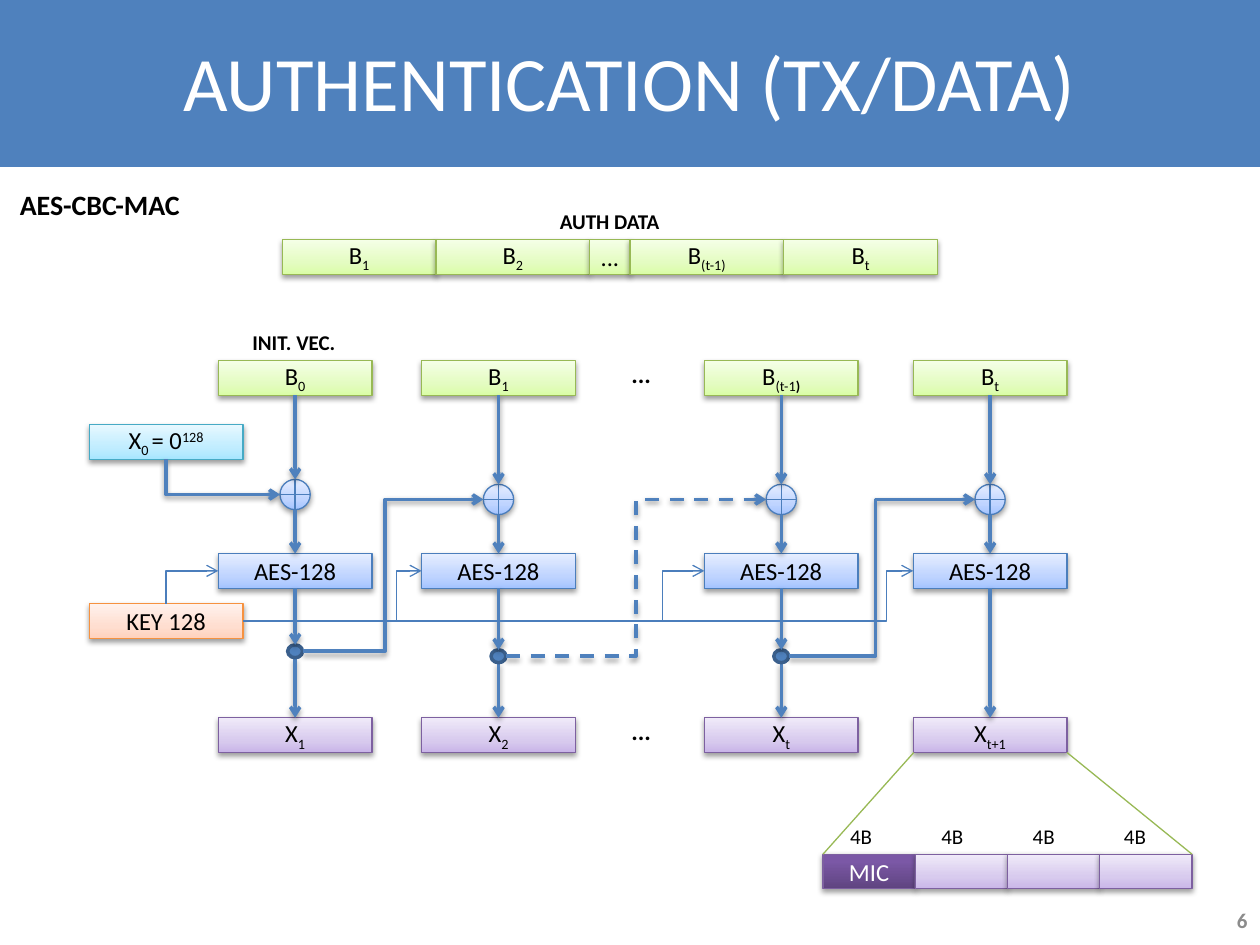
from copy import deepcopy
from dataclasses import dataclass
from typing import NamedTuple, Optional

from lxml import etree
from pptx import Presentation
from pptx.dml.color import RGBColor
from pptx.enum.dml import MSO_LINE
from pptx.enum.shapes import MSO_CONNECTOR, MSO_SHAPE
from pptx.enum.text import MSO_ANCHOR, PP_ALIGN
from pptx.oxml.ns import qn
from pptx.util import Cm, Pt

RECT, XOR, DOT = MSO_SHAPE.RECTANGLE, MSO_SHAPE.FLOWCHART_OR, MSO_SHAPE.FLOWCHART_CONNECTOR
STRAIGHT, ELBOW = MSO_CONNECTOR.STRAIGHT, MSO_CONNECTOR.ELBOW
LEFT, MID, RIGHT = PP_ALIGN.LEFT, PP_ALIGN.CENTER, PP_ALIGN.RIGHT
TOP, CENTER = MSO_ANCHOR.TOP, MSO_ANCHOR.MIDDLE

FONT = "Calibri"
BLUE, THIN, LIME = "4F81BD", "4B7EBC", "98B955"
WIDE, TALL, RING = 3.1, 0.7, 0.61  # box width, box height, XOR diameter
IN_Y, AES_Y, OUT_Y = 7.27, 11.16, 14.47  # tops of the three rows


class Bit(NamedTuple):
    text: str
    base: int = 0
    bold: bool = False


class Area(NamedTuple):
    x: float
    y: float
    w: float = WIDE
    h: float = TALL


class Skin(NamedTuple):
    line: str
    stops: tuple
    ink: str = "000000"
    middle: float = 0.35


@dataclass
class Lane:
    x: float
    ring: float  # XOR centre
    dot: Optional[float]  # branch point centre
    block: tuple
    out: tuple
    bend: float = 0.5
    dash: bool = False


GREEN = Skin(LIME, ("DAFDA7", "E4FCC2", "F5FFE7"))
SKY = Skin(THIN, ("A4C4FF", "BFD4FF", "E6EEFF"))
LILAC = Skin("7D60A0", ("C9B5E8", "D8CBEE", "F0EAF9"))
AQUA = Skin("46AAC5", ("A7E6FF", "C1EDFF", "E7F8FF"))
PEACH = Skin("F69240", ("FFD2BD", "FFDED0", "FFF2ED"))
PLUM = Skin("7D60A0", ("5F4480", "7B58A6", "7C57A8"), "FFFFFF", 0.8)


def sub(name: str, index: str) -> tuple:
    return Bit(name), Bit(index, -25)


LANES = (
    Lane(5.95, 9.97, 13.13, sub("B", "0"), sub("X", "1"), 0.456),
    Lane(10.05, 10.07, 13.23, sub("B", "1"), sub("X", "2"), 0.5, True),
    Lane(15.75, 10.07, 13.23, sub("B", "(t-1") + (Bit(")", -25, True),), sub("X", "t"), 0.465),
    Lane(19.96, 10.07, None, sub("B", "t"), sub("X", "t+1")),
)

deck = Presentation()
deck.slide_width, deck.slide_height = Cm(25.4), Cm(19.05)
slide = deck.slides.add_slide(deck.slide_layouts[6])
shapes = slide.shapes


def tint(color, code: str) -> None:
    color.rgb = RGBColor.from_string(code)


def shade(props) -> None:
    drop = etree.SubElement(props.find(qn("a:effectLst")), qn("a:outerShdw"), blurRad="40000",
                            dist="20000", dir="5400000", rotWithShape="0")
    black = etree.SubElement(drop, qn("a:srgbClr"), val="000000")
    etree.SubElement(black, qn("a:alpha"), val="38000")


def write(frame, bits: tuple, size: float, ink: str = "000000", align=MID,
          anchor=CENTER, inset: float = 0.1) -> None:
    frame.word_wrap, frame.vertical_anchor = True, anchor
    frame.margin_left = frame.margin_right = Cm(inset)
    frame.margin_top = frame.margin_bottom = Cm(0.1)
    frame.text = bits[0].text
    para = frame.paragraphs[0]
    para.alignment = align
    for bit in bits[1:]:
        para.add_run().text = bit.text
    for run, bit in zip(para.runs, bits):
        run.font.name, run.font.size, run.font.bold = FONT, Pt(size), bit.bold
        tint(run.font.color, ink)
        if bit.base:
            run.font._element.set("baseline", str(bit.base * 1000))


def plain(kind, area: Area, fill: str, line: str):
    shape = shapes.add_shape(kind, *map(Cm, area))
    shape.shadow.inherit = False
    shape.fill.solid()
    tint(shape.fill.fore_color, fill)
    tint(shape.line.color, line)
    shape.line.width = Pt(2)
    return shape


def block(area: Area, skin: Skin, bits: tuple = (), kind=RECT) -> None:
    shape = plain(kind, area, skin.stops[0], skin.line)
    shape.line.width = Pt(0.75)
    fill, props = shape.fill, shape._element.spPr
    fill.gradient()
    fill.gradient_angle = 90
    stops = props.find(".//" + qn("a:gsLst"))
    stops.insert(1, deepcopy(stops[0]))
    for stop, code, place in zip(fill.gradient_stops, skin.stops, (0, skin.middle, 1)):
        tint(stop.color, code)
        stop.position = place
    shade(props)
    if bits:
        write(shape.text_frame, bits, 14, skin.ink)


def note(area: Area, text: str, size: float, bold: bool = True, ink: str = "000000",
         align=MID, anchor=TOP, inset: float = 0.1) -> None:
    box = shapes.add_textbox(*map(Cm, area))
    write(box.text_frame, (Bit(text, 0, bold),), size, ink, align, anchor, inset)


def wire(x1: float, y1: float, x2: float, y2: float, code: str = BLUE, width: float = 2,
         bend: Optional[float] = None, dash: bool = False, arrow: bool = True):
    kind = STRAIGHT if bend is None else ELBOW
    link = shapes.add_connector(kind, Cm(x1), Cm(y1), Cm(x2), Cm(y2))
    tint(link.line.color, code)
    link.line.width = Pt(width)
    if dash:
        link.line.dash_style = MSO_LINE.DASH
    props = link._element.spPr
    if arrow:
        etree.SubElement(props.find(qn("a:ln")), qn("a:tailEnd"), type="arrow")
    etree.SubElement(props, qn("a:effectLst"))
    if width == 2:
        shade(props)
    if bend is not None:
        etree.SubElement(props.find(".//" + qn("a:avLst")), qn("a:gd"), name="adj1",
                         fmla=f"val {round(bend * 100000)}")
    return link


def corner(x1: float, y1: float, x2: float, y2: float, code: str, width: float) -> None:
    """One bend: first up or down, then to the right."""
    cx, cy, half, rise = (x1 + x2) / 2, (y1 + y2) / 2, abs(y2 - y1) / 2, (x2 - x1) / 2
    side = rise if y2 > y1 else -rise
    link = wire(cx + half, cy - side, cx - half, cy + side, code, width)
    props = link._element.spPr
    props.find(qn("a:xfrm")).set("rot", "16200000" if y2 > y1 else "5400000")
    props.find(qn("a:prstGeom")).set("prst", "bentConnector2")


# Title band and headings
band = plain(RECT, Area(0, 0, 25.4, 3.33), BLUE, BLUE)
note(Area(0.3, 0.13, 24.8, 3), "AUTHENTICATION (TX/DATA)", 44, False, "FFFFFF", anchor=CENTER)
note(Area(0.3, 3.68, 3.58, 0.89), "AES-CBC-MAC", 16, align=LEFT)
note(Area(5.69, 4.11, 13.2), "AUTH DATA", 12)
note(Area(4.35, 6.55, 3.15), "INIT. VEC.", 12)

# Authenticated data strip
x = 5.69
for bits, w in ((sub("B", "1"), WIDE), (sub("B", "2"), WIDE), ((Bit("..."),), 0.81),
                (sub("B", "(t-1)"), WIDE), (sub("B", "t"), WIDE)):
    block(Area(x, 4.83, w), GREEN, bits)
    x += w

# Start value and key
block(Area(1.8, 8.56), AQUA, (Bit("X"), Bit("0 ", -25), Bit("= 0"), Bit("128", 30)))
block(Area(1.8, 12.17), PEACH, (Bit("KEY 128"),))

# Cipher lanes
for lane in LANES:
    left = lane.x - WIDE / 2
    block(Area(left, IN_Y), GREEN, lane.block)
    block(Area(lane.x - RING / 2, lane.ring - RING / 2, RING, RING), SKY, kind=XOR)
    block(Area(left, AES_Y), SKY, (Bit("AES-128"),))
    block(Area(left, OUT_Y), LILAC, lane.out)
    wire(lane.x, IN_Y + TALL, lane.x, lane.ring - RING / 2)
    wire(lane.x, lane.ring + RING / 2, lane.x, AES_Y)
    if lane.dot is None:
        wire(lane.x, AES_Y + TALL, lane.x, OUT_Y)
    else:
        wire(lane.x, lane.dot + 0.13, lane.x, OUT_Y)
        plain(DOT, Area(lane.x - 0.15, lane.dot - 0.13, 0.3, 0.26), BLUE, "3A5F8C")
        wire(lane.x, AES_Y + TALL, lane.x, lane.dot - 0.13)

# Chaining from each lane to the next
corner(3.35, 9.26, LANES[0].x - RING / 2, LANES[0].ring, BLUE, 2)
for lane, after in zip(LANES, LANES[1:]):
    wire(lane.x + 0.15, lane.dot, after.x - RING / 2, after.ring, bend=lane.bend, dash=lane.dash)

# Key distribution
corner(3.35, 12.17, LANES[0].x - WIDE / 2, 11.51, THIN, 0.75)
for lane, bend in zip(LANES[1:], (0.86, 0.91, 0.96)):
    wire(4.9, 12.52, lane.x - WIDE / 2, 11.51, THIN, 0.75, bend)

# Skipped lanes
for y in (7.14, 14.33):
    note(Area(12.34, y, 1.17, 0.81), "...", 14)

# Last output split into four parts
CELL, CUT_X, CUT_Y = 1.86, 16.59, 17.22
for i in range(4):
    block(Area(CUT_X + i * CELL, CUT_Y, CELL), LILAC if i else PLUM, () if i else (Bit("MIC"),))
    note(Area(16.76 + i * 1.84, 16.51, 1.2), "4B", 12, False)
for x1, x2 in ((18.42, CUT_X), (21.51, CUT_X + 4 * CELL)):
    wire(x1, OUT_Y + TALL, x2, CUT_Y, LIME, 0.75, arrow=False)

# Page number
note(Area(24.1, 18.03, 1.3, 1.02), "6", 12, ink="8C8C8C", align=RIGHT, anchor=CENTER, inset=0.25)

deck.save("out.pptx")
